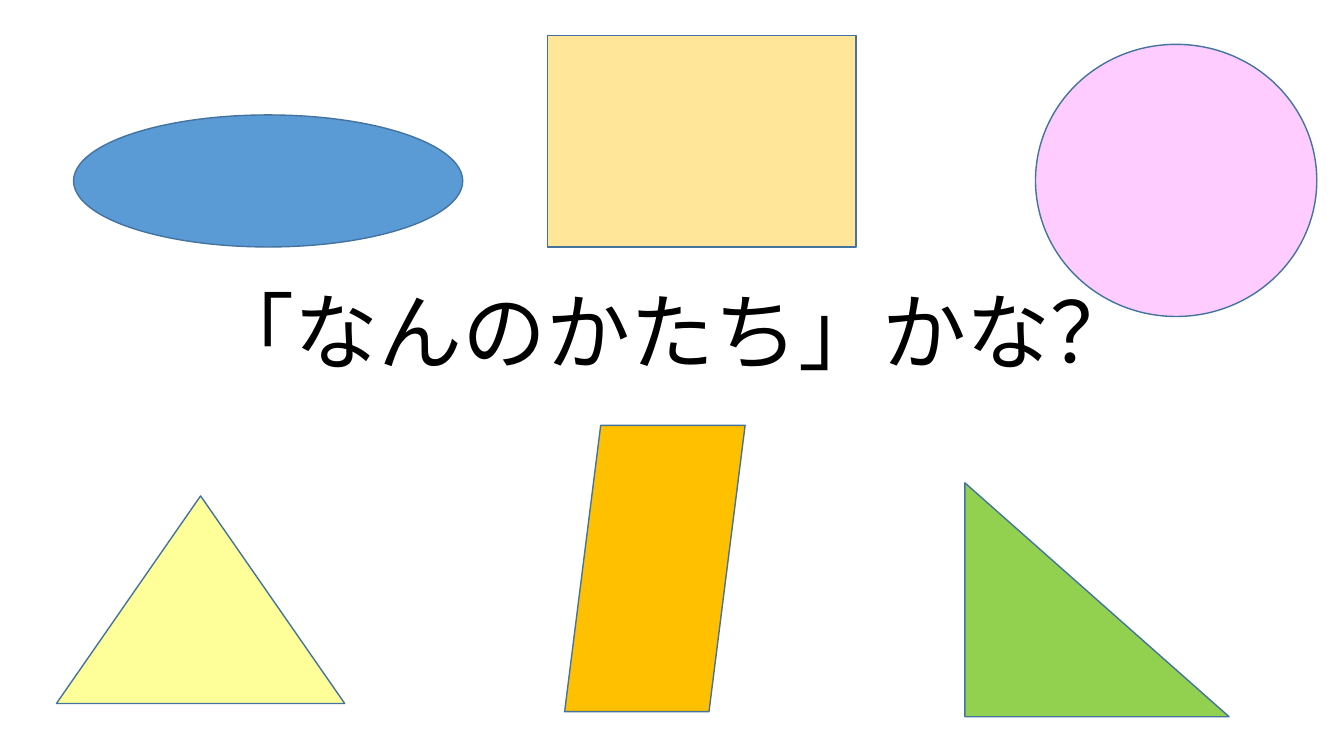
from lxml import etree
from pptx import Presentation
from pptx.dml.color import RGBColor
from pptx.enum.shapes import MSO_SHAPE
from pptx.enum.text import MSO_ANCHOR, PP_ALIGN
from pptx.oxml.ns import qn
from pptx.util import Inches, Pt

OVAL = MSO_SHAPE.OVAL
RECTANGLE = MSO_SHAPE.RECTANGLE
PARALLELOGRAM = MSO_SHAPE.FLOWCHART_DATA
TRIANGLE = MSO_SHAPE.ISOSCELES_TRIANGLE
RIGHT_TRIANGLE = MSO_SHAPE.RIGHT_TRIANGLE
BOTTOM = MSO_ANCHOR.BOTTOM
CENTER = PP_ALIGN.CENTER

ORANGE = RGBColor(0xFF, 0xC0, 0x00)
PINK = RGBColor(0xFF, 0xCC, 0xFF)
CREAM = RGBColor(0xFF, 0xE6, 0x99)
YELLOW = RGBColor(0xFF, 0xFF, 0x99)
GREEN = RGBColor(0x92, 0xD0, 0x50)
BLUE = RGBColor(0x5B, 0x9B, 0xD5)
OUTLINE = RGBColor(0x43, 0x73, 0x9E)
BLACK = RGBColor(0x00, 0x00, 0x00)

FONT = "Noto Sans CJK JP"
TITLE = "「なんのかたち」かな？"
TITLE_AREA = (1.67, 1.23, 10, 2.61)

# Kind, fill, (left, top, width, height) in inches
SHAPES_BEHIND_TITLE = [
    (PARALLELOGRAM, ORANGE, (5.6, 4.22, 1.79, 2.84)),
    (OVAL, PINK, (10.27, 0.44, 2.79, 2.7)),
    (RECTANGLE, CREAM, (5.43, 0.35, 3.06, 2.1)),
]
SHAPES_ABOVE_TITLE = [
    (TRIANGLE, YELLOW, (0.56, 4.92, 2.86, 2.06)),
    (RIGHT_TRIANGLE, GREEN, (9.57, 4.79, 2.62, 2.32)),
    (OVAL, BLUE, (0.73, 1.14, 3.86, 1.31)),
]


def add_shapes(page, shapes):
    for kind, color, area in shapes:
        shape = page.shapes.add_shape(kind, *map(Inches, area))
        shape.shadow.inherit = False
        shape.fill.solid()
        shape.fill.fore_color.rgb = color
        shape.line.color.rgb = OUTLINE
        shape.line.width = Pt(1)


def add_title(page):
    box = page.shapes.add_textbox(*map(Inches, TITLE_AREA))
    frame = box.text_frame
    frame.word_wrap = True
    frame.vertical_anchor = BOTTOM
    para = frame.paragraphs[0]
    para.alignment = CENTER
    para.line_spacing = 0.9
    span = para.add_run()
    span.text = TITLE
    span.font.size = Pt(60)
    span.font.color.rgb = BLACK
    span.font.name = FONT
    east_asian = etree.SubElement(span.font._element, qn("a:ea"))
    east_asian.set("typeface", FONT)


def main():
    deck = Presentation()
    deck.slide_width = Inches(13.33)
    deck.slide_height = Inches(7.5)
    page = deck.slides.add_slide(deck.slide_layouts[6])
    add_shapes(page, SHAPES_BEHIND_TITLE)
    add_title(page)
    add_shapes(page, SHAPES_ABOVE_TITLE)
    deck.save("out.pptx")


if __name__ == "__main__":
    main()
